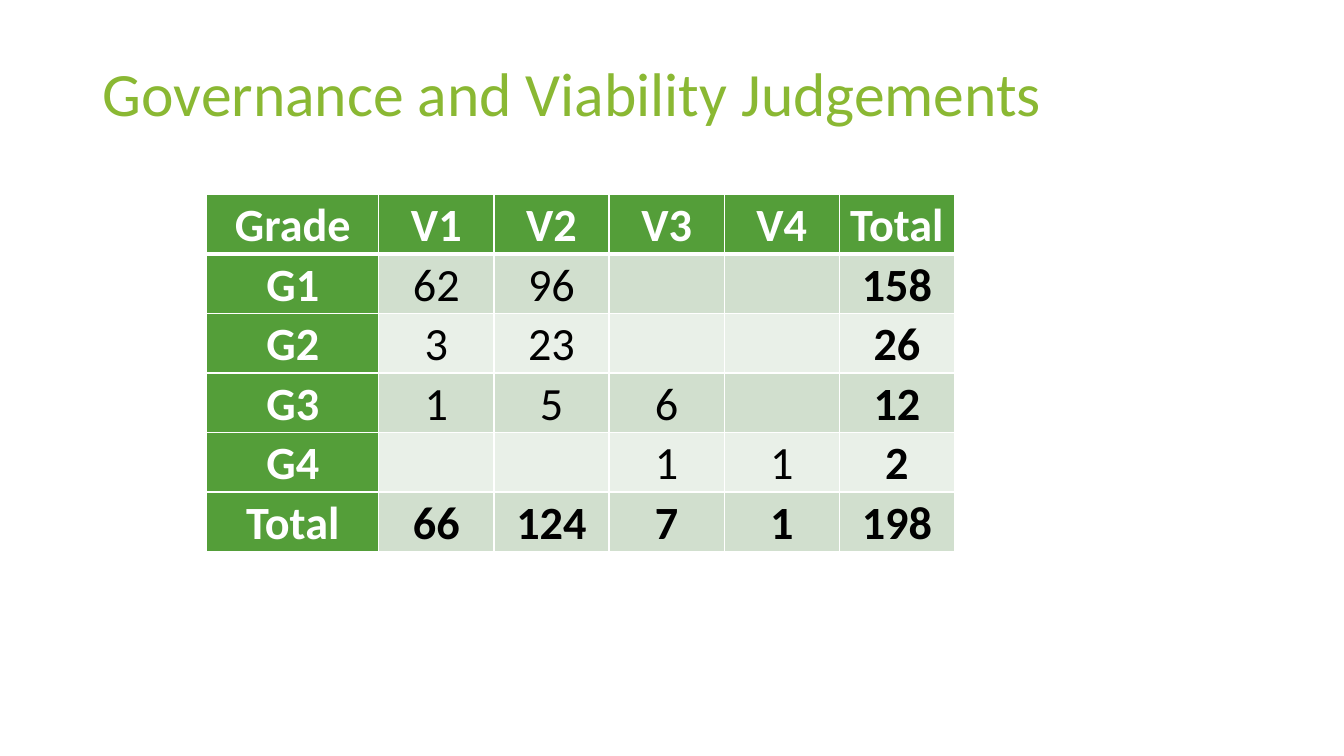
from lxml.etree import SubElement as Sub
from pptx import Presentation as Deck
from pptx.dml.color import RGBColor as Color
from pptx.enum.text import MSO_ANCHOR as Anchor, PP_ALIGN as Align
from pptx.oxml.ns import qn
from pptx.util import Cm, Pt

GREEN, WHITE, BLACK = "549E39", "FFFFFF", "000000"
BANDS = ["D1DFCE", "E9F0E8"]
GRADES = [
    ["Grade", "V1", "V2", "V3", "V4", "Total"],
    ["G1", "62", "96", "", "", "158"],
    ["G2", "3", "23", "", "", "26"],
    ["G3", "1", "5", "6", "", "12"],
    ["G4", "", "", "1", "1", "2"],
    ["Total", "66", "124", "7", "1", "198"],
]


def paint(part, tint):
    """Give a fill or font a solid colour from a hex string."""
    if hasattr(part, "solid"):
        part.solid()
        part.fore_color.rgb = Color.from_string(tint)
    else:
        part.color.rgb = Color.from_string(tint)


def style(para, size, tint, bold=False):
    """Format every run of a paragraph."""
    for run in para.runs:
        run.font.name = "Calibri"
        run.font.size = Pt(size)
        run.font.bold = bold
        paint(run.font, tint)


def edge(cell, row):
    """Draw the white borders of a cell, thick under the header."""
    props = cell._tc.get_or_add_tcPr()
    sides = {"L": 1, "R": 1, "T": 3 if row == 1 else 1, "B": 3 if row == 0 else 1}
    for side, width in sides.items():
        line = Sub(props, qn(f"a:ln{side}"), w=str(Pt(width)))
        Sub(Sub(line, qn("a:solidFill")), qn("a:srgbClr"), val=WHITE)


def title(slide, left, top, width, height):
    """Place the slide title at the foot of its box."""
    frame = slide.shapes.add_textbox(Cm(left), Cm(top), Cm(width), Cm(height)).text_frame
    frame.word_wrap = True
    frame.vertical_anchor = Anchor.BOTTOM
    frame.text = "Governance and Viability Judgements"
    para = frame.paragraphs[0]
    para.line_spacing = 0.9
    style(para, 44, "8AB833")


def fill_cell(cell, text, row, col):
    """Write and format one cell by its place in the grid."""
    last = len(GRADES) - 1
    head = row == 0 or col == 0
    edge(cell, row)
    paint(cell.fill, GREEN if head else BANDS[(row - 1) % 2])
    if not text:
        return
    cell.margin_left = cell.margin_right = cell.margin_top = Cm(0.08)
    cell.margin_bottom = 0
    cell.vertical_anchor = Anchor.BOTTOM
    cell.text_frame.text = text
    para = cell.text_frame.paragraphs[0]
    para.alignment = Align.CENTER
    style(para, 33, WHITE if head else BLACK, head or last in (row, col))


def matrix(slide, left, top, width, height):
    """Place the table of grades, with a wider first column."""
    count = len(GRADES)
    table = slide.shapes.add_table(
        count, count, Cm(left), Cm(top), Cm(width), Cm(height)).table
    first = 0.23 * width
    for col, column in enumerate(table.columns):
        column.width = Cm((width - first) / (count - 1) if col else first)
    for row, texts in enumerate(GRADES):
        table.rows[row].height = Cm(height / count)
        for col, text in enumerate(texts):
            fill_cell(table.cell(row, col), text, row, col)


def main():
    """Build and save the slide."""
    deck = Deck()
    deck.slide_width, deck.slide_height = Cm(33.87), Cm(19.05)
    slide = deck.slides.add_slide(deck.slide_layouts[6])
    title(slide, 2.34, 0.81, 29.21, 2.59)
    matrix(slide, 5.21, 4.9, 18.85, 9)
    deck.save("out.pptx")


if __name__ == "__main__":
    main()
